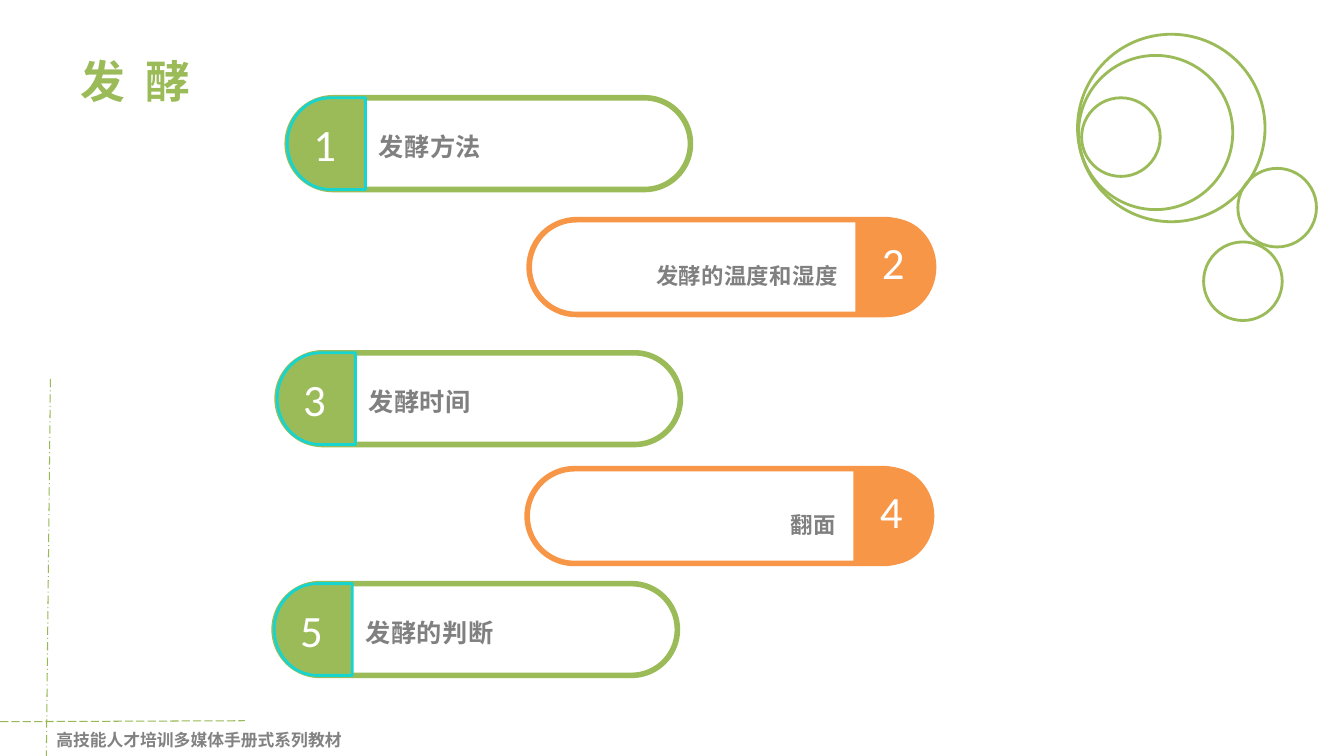
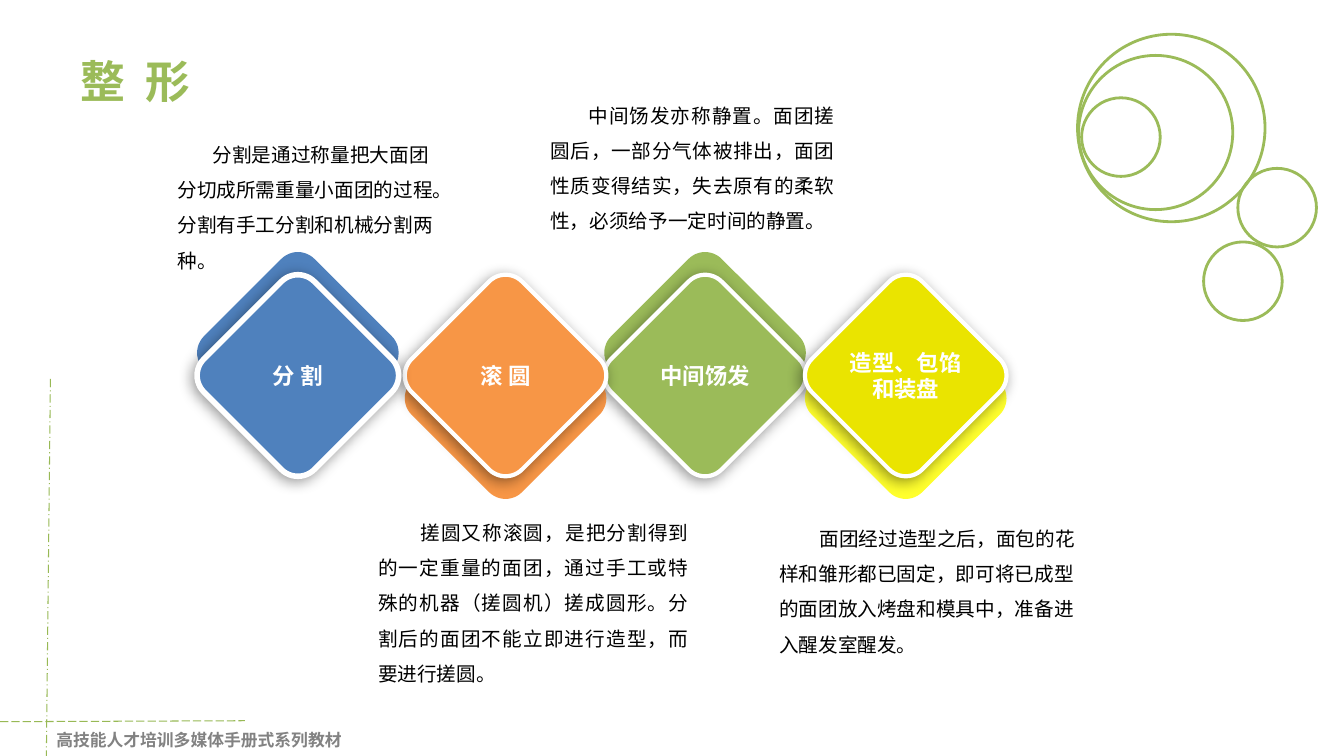
"""Build two slides on fermenting and shaping bread dough."""
import math

from lxml import etree
from pptx import Presentation
from pptx.dml.color import RGBColor
from pptx.enum.dml import MSO_LINE
from pptx.enum.shapes import MSO_CONNECTOR, MSO_SHAPE
from pptx.enum.text import MSO_ANCHOR, PP_ALIGN
from pptx.oxml.ns import qn
from pptx.util import Inches, Pt

LEFT, CENTER, RIGHT, JUSTIFY = (
    PP_ALIGN.LEFT, PP_ALIGN.CENTER, PP_ALIGN.RIGHT, PP_ALIGN.JUSTIFY)
TOP, MIDDLE = MSO_ANCHOR.TOP, MSO_ANCHOR.MIDDLE
OVAL, ROUNDED = MSO_SHAPE.OVAL, MSO_SHAPE.ROUNDED_RECTANGLE
DASH, DASH_DOT = MSO_LINE.LONG_DASH, MSO_LINE.LONG_DASH_DOT
STRAIGHT = MSO_CONNECTOR.STRAIGHT
TITLE_ONLY = 5

GREEN, ORANGE, BLUE, CYAN = "9BBB59", "F79646", "4F81BD", "16D4CF"
YELLOW, BRIGHT_YELLOW = "EAE400", "FFFF2D"
RULE, GREY, FOOTER_GREY = "98B955", "808080", "828282"
WHITE, BLACK = "FFFFFF", "000000"
CJK = "Noto Sans CJK SC"
FOOTER = "高技能人才培训多媒体手册式系列教材"

CIRCLES = [(106.9, 3.4, 18.6), (107, 5.5, 15.3), (122.8, 16.7, 7.8),
           (107.3, 9.7, 7.8), (119.4, 24, 7.8)]
PILL_W, CAP_W, CAP_R = 40, 7.75, 4.25
SIDE, SHIFT, DIAMOND_TOP = 15.5, 2.25, 29.5


def rgb(hex_color):
    """Turn a hex string into a colour."""
    return RGBColor.from_string(hex_color)


def cells(*lengths):
    """Turn lengths in grid cells of a tenth of an inch into EMU."""
    return [Inches(n / 10) for n in lengths]


def write(tf, text, size=14, color=BLACK, font=CJK, bold=False, align=LEFT,
          anchor=TOP, leading=1.0, spacing=0, indent=0, inset=True):
    """Fill a text frame with one formatted paragraph."""
    tf.word_wrap = True
    tf.vertical_anchor = anchor
    side, edge = cells(1, 0.5) if inset else (0, 0)
    tf.margin_left = tf.margin_right = side
    tf.margin_top = tf.margin_bottom = edge
    p = tf.paragraphs[0]
    p.alignment = align
    p.line_spacing = Pt(size * 1.2 * leading)
    p.space_before = Pt(0)
    if indent:
        pPr = p._p.get_or_add_pPr()
        pPr.set("marL", "0")
        pPr.set("indent", str(cells(indent)[0]))
    r = p.add_run()
    r.text = text
    r.font.size, r.font.bold = Pt(size), bold
    r.font.color.rgb = rgb(color)
    r.font.name = font
    rPr = r._r.get_or_add_rPr()
    rPr.set("spc", str(round(spacing * 100)))
    etree.SubElement(rPr, qn("a:ea")).set("typeface", CJK)


class Deck:
    """Hold the shared style and the current slide."""

    def __init__(self):
        """Start an empty wide presentation."""
        self.prs = Presentation()
        self.prs.slide_width, self.prs.slide_height = cells(133.33, 75)

    def slide(self, title):
        """Add a slide with its title, rules, circles and footer."""
        self.s = self.prs.slides.add_slide(
            self.prs.slide_layouts[TITLE_ONLY])
        self.line(5, 37.6, 4.6, 75, DASH_DOT)
        self.line(0, 71.6, 24.3, 71.5, DASH)
        self.text(4.6, 71.9, 31.5, 3, FOOTER, size=12, color=FOOTER_GREY,
                  font="Times New Roman", bold=True)
        for x, y, d in CIRCLES:
            self.shape(OVAL, x, y, d, d, line=GREEN)
        sp = self.s.shapes.title
        sp.left, sp.top, sp.width, sp.height = cells(7, 4.8, 30, 6.4)
        write(sp.text_frame, title, size=32, color=GREEN, bold=True,
              spacing=3.6)

    def line(self, x1, y1, x2, y2, dash):
        """Draw a thin dashed rule."""
        sp = self.s.shapes.add_connector(STRAIGHT, *cells(x1, y1, x2, y2))
        sp.line.color.rgb = rgb(RULE)
        sp.line.width = Pt(0.75)
        sp.line.dash_style = dash
        etree.SubElement(sp._element.spPr, qn("a:effectLst"))

    def text(self, x, y, w, h, text, **style):
        """Place a text box."""
        sp = self.s.shapes.add_textbox(*cells(x, y, w, h))
        write(sp.text_frame, text, **style)

    def paint(self, sp, fill=None, line=None, width=2):
        """Set the fill and outline of a shape."""
        sp.shadow.inherit = False
        if fill:
            sp.fill.solid()
            sp.fill.fore_color.rgb = rgb(fill)
        else:
            sp.fill.background()
        if line:
            sp.line.color.rgb = rgb(line)
            sp.line.width = Pt(width)
        else:
            sp.line.fill.background()
        return sp

    def shape(self, kind, x, y, w, h, adj=None, rotation=0, **look):
        """Place a preset shape."""
        sp = self.s.shapes.add_shape(kind, *cells(x, y, w, h))
        if adj is not None:
            sp.adjustments[0] = adj
        sp.rotation = rotation
        return self.paint(sp, **look)

    def cap(self, flat_x, y, h, direction, fill, line):
        """Draw a pill end, round on the side that direction points to."""
        straight = CAP_W - CAP_R
        points = [(flat_x, y)]
        for step in range(33):
            a = math.pi * step / 32
            reach = straight + CAP_R * math.sin(a)
            points.append((flat_x + direction * reach,
                           y + h / 2 * (1 - math.cos(a))))
        points.append((flat_x, y + h))
        start, *rest = [cells(*point) for point in points]
        builder = self.s.shapes.build_freeform(*start)
        builder.add_line_segments(rest, close=True)
        self.paint(builder.convert_to_shape(), fill, line)

    def pill(self, x, y, number, label, on_right):
        """Draw a numbered pill with its number on one end."""
        if on_right:
            h, color, edge, direction, flat = 9.4, ORANGE, ORANGE, 1, 32.5
            number_at, label_at, size, align = (34, 1), (2, 2.4), 16, RIGHT
        else:
            h, color, edge, direction, flat = 9.1, GREEN, CYAN, -1, CAP_W
            number_at, label_at, size, align = (1.6, 1.4), (8.1, 1.3), 18, LEFT
        self.shape(ROUNDED, x, y, PILL_W, h, adj=0.5, fill=WHITE,
                   line=color, width=4)
        self.cap(x + flat, y, h, direction, color, edge)
        self.text(x + number_at[0], y + number_at[1], 4.6, 6.4, str(number),
                  size=32, color=WHITE, font="Calibri")
        self.text(x + label_at[0], y + label_at[1], 29.6, 4.8, label,
                  size=size, color=GREY, font="Arial", bold=True,
                  align=align, leading=1.5, spacing=0.3)

    def diamond(self, x, label, back, front, up, width=3):
        """Draw a labelled diamond over a shifted one."""
        turn, shift = (315, -SHIFT) if up else (135, SHIFT)
        self.shape(ROUNDED, x, DIAMOND_TOP + shift, SIDE, SIDE, adj=0.15,
                   rotation=turn, fill=back)
        sp = self.shape(ROUNDED, x, DIAMOND_TOP, SIDE, SIDE, adj=0.15,
                        rotation=turn, fill=front, line=WHITE, width=width)
        effects = sp._element.spPr.find(qn("a:effectLst"))
        shadow = etree.SubElement(
            effects, qn("a:outerShdw"), blurRad=str(Pt(10)),
            dist=str(Pt(3)), dir=str(135 * 60000), rotWithShape="0")
        tint = etree.SubElement(shadow, qn("a:srgbClr"), val=BLACK)
        etree.SubElement(tint, qn("a:alpha"), val="40000")
        self.text(x + 1.15, 35.8, 13.2, 2.9, label, size=16, color=WHITE,
                  bold=True, align=CENTER, anchor=MIDDLE)


def main():
    """Build both slides and save them."""
    deck = Deck()
    deck.slide("发 酵")
    pills = [(28.5, 9.7, "发酵方法"), (52.5, 21.8, "发酵的温度和湿度"),
             (27.5, 35, "发酵时间"), (52.3, 46.5, "翻面"),
             (27.2, 57.9, "发酵的判断")]
    for number, (x, y, label) in enumerate(pills, 1):
        deck.pill(x, y, number, label, on_right=number % 2 == 0)

    deck.slide("整 形")
    deck.diamond(62.2, "中间饧发", GREEN, GREEN, up=True)
    deck.diamond(42.4, "滚 圆", ORANGE, ORANGE, up=False)
    deck.diamond(21.8, "分 割", BLUE, BLUE, up=True, width=4)
    deck.diamond(82.1, "造型、包馅和装盘", BRIGHT_YELLOW, YELLOW, up=False)
    notes = [
        (17.6, 13, 25.5, 14.1, 3.5, LEFT,
         "分割是通过称量把大面团分切成所需重量小面团的过程。"
         "分割有手工分割和机械分割两种。"),
        (37.5, 50.5, 30.8, 17.7, 4.2, JUSTIFY,
         "搓圆又称滚圆，是把分割得到的一定重量的面团，通过手工或特殊的机器"
         "（搓圆机）搓成圆形。分割后的面团不能立即进行造型，而要进行搓圆。"),
        (54.6, 9.1, 28.2, 14.1, 3.8, JUSTIFY,
         "中间饧发亦称静置。面团搓圆后，一部分气体被排出，面团性质变得结实，"
         "失去原有的柔软性，必须给予一定时间的静置。"),
        (77.3, 51.1, 31, 14.1, 4, LEFT,
         "面团经过造型之后，面包的花样和雏形都已固定，即可将已成型的面团"
         "放入烤盘和模具中，准备进入醒发室醒发。"),
    ]
    for x, y, w, h, indent, align, note in notes:
        deck.text(x, y, w, h, note, indent=indent, align=align,
                  leading=1.5, inset=False)
    deck.prs.save("out.pptx")


if __name__ == "__main__":
    main()
